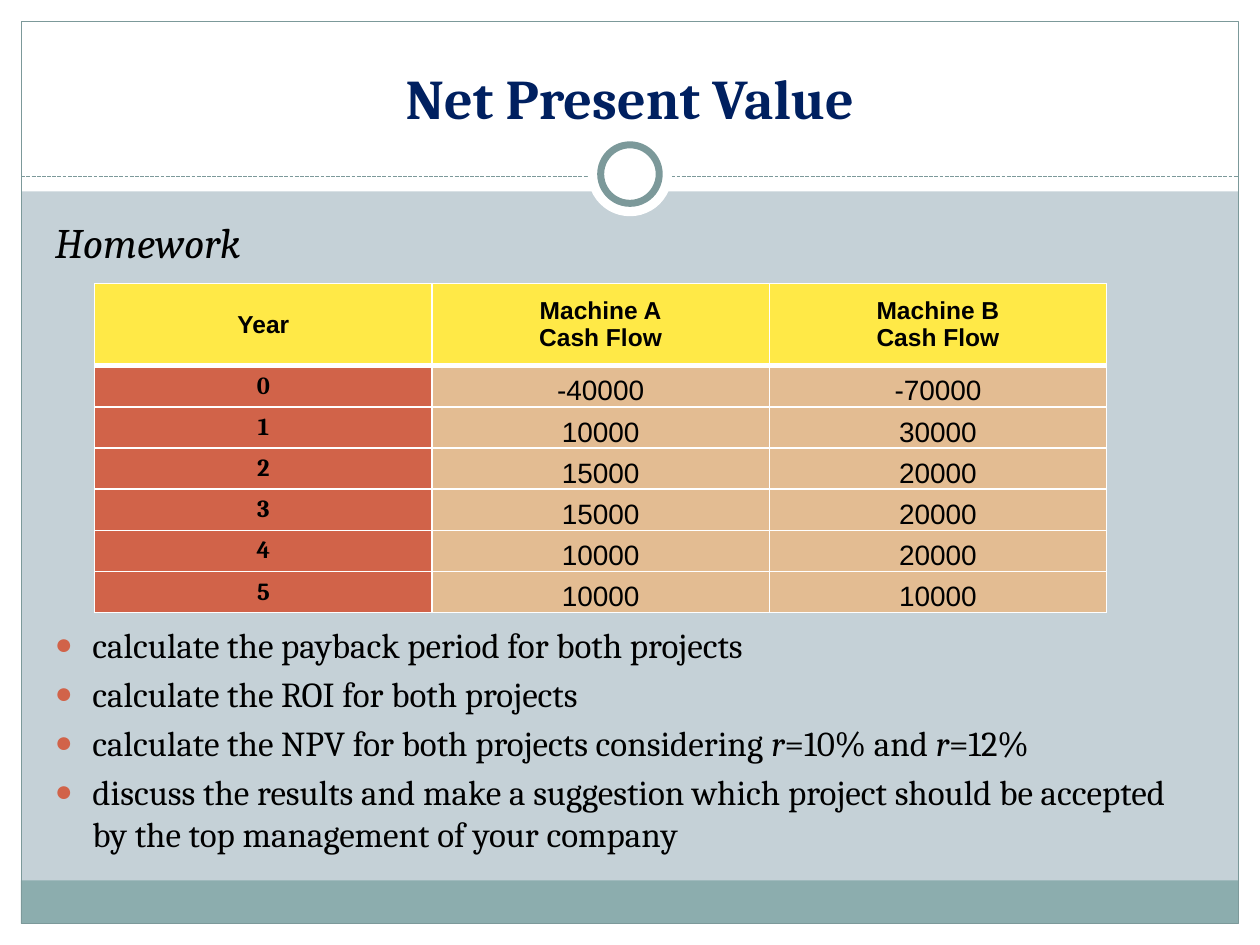
"""Build the Net Present Value homework slide with its cash flow table."""
from lxml.etree import SubElement
from pptx import Presentation
from pptx.dml.color import RGBColor
from pptx.enum.dml import MSO_LINE
from pptx.enum.shapes import MSO_CONNECTOR, MSO_SHAPE
from pptx.enum.text import MSO_ANCHOR, MSO_AUTO_SIZE, PP_ALIGN
from pptx.oxml.ns import qn
from pptx.util import Cm, Pt

WHITE, TEAL, SLATE, BLACK = "FFFFFF", "8CADAE", "7C999A", "000000"
NAVY, RUST, SAND, YELLOW = "002060", "D16349", "E3BC92", "FFE947"

CASH_FLOWS = [
    ("Year", "Machine A\nCash Flow", "Machine B\nCash Flow"),
    ("0", "-40000", "-70000"),
    ("1", "10000", "30000"),
    ("2", "15000", "20000"),
    ("3", "15000", "20000"),
    ("4", "10000", "20000"),
    ("5", "10000", "10000"),
]
TASKS = [
    ["calculate the payback period for both projects"],
    ["calculate the ROI for both projects"],
    ["calculate the NPV for both projects considering ", "r", "=10% and ", "r", "=12%"],
    ["discuss the results and make a suggestion which project should be accepted "
     "by the top management of your company"],
]


def rgb(value):
    return RGBColor.from_string(value)


def apply(target, values):
    for name, value in values.items():
        setattr(target, name, value)


class SlideBuilder:
    title_font = {"name": "Cambria", "size": Pt(32), "bold": True}
    lead_font = {"name": "Cambria", "size": Pt(24), "italic": True}
    task_font = {"name": "Cambria", "size": Pt(20)}
    head_font = {"name": "Arial", "size": Pt(14), "bold": True}
    year_font = {"name": "Cambria", "size": Pt(14), "bold": True}
    cash_font = {"name": "Arial", "size": Pt(16), "bold": False}
    cell_format = {"margin_left": Cm(0.18), "margin_right": Cm(0.18),
                   "margin_top": 0, "margin_bottom": 0}

    def __init__(self, prs, background):
        self.s = prs.slides.add_slide(prs.slide_layouts[1])
        fill = self.s.background.fill
        fill.solid()
        fill.fore_color.rgb = rgb(background)

    def font(self, font, values, color=BLACK):
        apply(font, values)
        font.color.rgb = rgb(color)

    def shape(self, kind, box, fill=None, line=None, width=0.75):
        sp = self.s.shapes.add_shape(kind, *map(Cm, box))
        sp.shadow.inherit = False
        if fill:
            sp.fill.solid()
            sp.fill.fore_color.rgb = rgb(fill)
        else:
            sp.fill.background()
        if line:
            sp.line.color.rgb = rgb(line)
            sp.line.width = Pt(width)
        else:
            sp.line.fill.background()

    def dashed_line(self, ends, color):
        cxn = self.s.shapes.add_connector(MSO_CONNECTOR.STRAIGHT, *map(Cm, ends))
        SubElement(cxn._element.spPr, qn("a:effectLst"))
        cxn.line.color.rgb = rgb(color)
        apply(cxn.line, {"width": Pt(0.75), "dash_style": MSO_LINE.SQUARE_DOT})

    def placeholder(self, index, box, anchor):
        sp = self.s.placeholders[index]
        apply(sp, dict(zip(("left", "top", "width", "height"), map(Cm, box))))
        self.s.shapes._spTree.append(sp._element)
        apply(sp.text_frame, {"word_wrap": True, "vertical_anchor": anchor,
                              "auto_size": MSO_AUTO_SIZE.NONE})
        return sp.text_frame

    def title(self, text, box):
        p = self.placeholder(0, box, MSO_ANCHOR.BOTTOM).paragraphs[0]
        p.text, p.alignment = text, PP_ALIGN.CENTER
        self.font(p.runs[0].font, self.title_font, NAVY)

    def bullet(self, p):
        pPr = p._p.get_or_add_pPr()
        pPr.set("marL", str(Cm(0.76)))
        pPr.set("indent", str(-Cm(0.76)))
        SubElement(SubElement(pPr, qn("a:buClr")), qn("a:srgbClr"), val=RUST)
        SubElement(pPr, qn("a:buSzPct"), val="85000")
        SubElement(pPr, qn("a:buFont"), typeface="Arial")
        SubElement(pPr, qn("a:buChar"), char="●")

    def body(self, lead, tasks, box, table_gap):
        tf = self.placeholder(1, box, MSO_ANCHOR.TOP)
        p = tf.paragraphs[0]
        p.text = lead
        pPr = p._p.get_or_add_pPr()
        pPr.set("marL", "0")
        pPr.set("indent", "0")
        SubElement(pPr, qn("a:buNone"))
        p.space_before = Pt(0)
        self.font(p.runs[0].font, self.lead_font)
        for i, parts in enumerate(tasks):
            p = tf.add_paragraph()
            self.bullet(p)
            p.space_before = Pt(4 if i else table_gap)
            for part in parts:
                r = p.add_run()
                r.text = part
                self.font(r.font, self.task_font | {"italic": part == "r"})

    def borders(self, cell, widths):
        tcPr = cell._tc.get_or_add_tcPr()
        for i, (side, width) in enumerate(widths.items()):
            ln = SubElement(tcPr, qn(f"a:ln{side}"), w=str(Pt(width)))
            SubElement(SubElement(ln, qn("a:solidFill")), qn("a:srgbClr"), val=WHITE)
            tcPr.remove(ln)
            tcPr.insert(i, ln)

    def cell(self, cell, text, fill, font, anchor):
        apply(cell, self.cell_format | {"text": text, "vertical_anchor": anchor})
        cell.fill.solid()
        cell.fill.fore_color.rgb = rgb(fill)
        for p in cell.text_frame.paragraphs:
            p.alignment = PP_ALIGN.CENTER
            self.font(p.runs[0].font, font)

    def table(self, rows, box, head_height, row_height):
        frame = self.s.shapes.add_table(len(rows), len(rows[0]), *map(Cm, box))
        table = frame.table
        apply(table, {"first_row": False, "horz_banding": False})
        for i, row in enumerate(rows):
            table.rows[i].height = Cm(row_height if i else head_height)
            for j, text in enumerate(row):
                if i == 0:
                    look = YELLOW, self.head_font, MSO_ANCHOR.MIDDLE
                elif j == 0:
                    look = RUST, self.year_font, MSO_ANCHOR.MIDDLE
                else:
                    look = SAND, self.cash_font, MSO_ANCHOR.BOTTOM
                self.cell(table.cell(i, j), text, *look)
                self.borders(table.cell(i, j), {"L": 1, "R": 1, "T": 3 if i == 1 else 1,
                                                "B": 3 if i == 0 else 1})


def main():
    prs = Presentation()
    apply(prs, {"slide_width": Cm(25.4), "slide_height": Cm(19.05)})
    s = SlideBuilder(prs, "C5D1D7")
    rect, oval = MSO_SHAPE.RECTANGLE, MSO_SHAPE.OVAL
    for box in ((0, 18.62, 25.4, 0.43), (0, 0, 25.4, 3.86),
                (0, 0, 0.43, 19.05), (24.97, 0, 0.43, 19.05)):
        s.shape(rect, box, WHITE)
    s.shape(rect, (0.42, 17.75, 24.54, 0.87), TEAL)
    s.shape(rect, (0.43, 0.43, 24.54, 18.19), line=SLATE)
    s.dashed_line((0.43, 3.56, 24.97, 3.56), SLATE)
    s.shape(oval, (11.85, 2.66, 1.7, 1.7), WHITE)
    s.shape(oval, (12.11, 2.92, 1.18, 1.18), WHITE, SLATE, 4)
    s.title("Net Present Value", (0.85, 0.64, 23.7, 2.12))
    s.body("Homework", TASKS, (0.85, 4.23, 23.27, 12.7), table_gap=204)
    s.table(CASH_FLOWS, (1.91, 5.72, 20.4, 6.63), head_height=1.65, row_height=0.83)
    prs.save("out.pptx")


if __name__ == "__main__":
    main()
